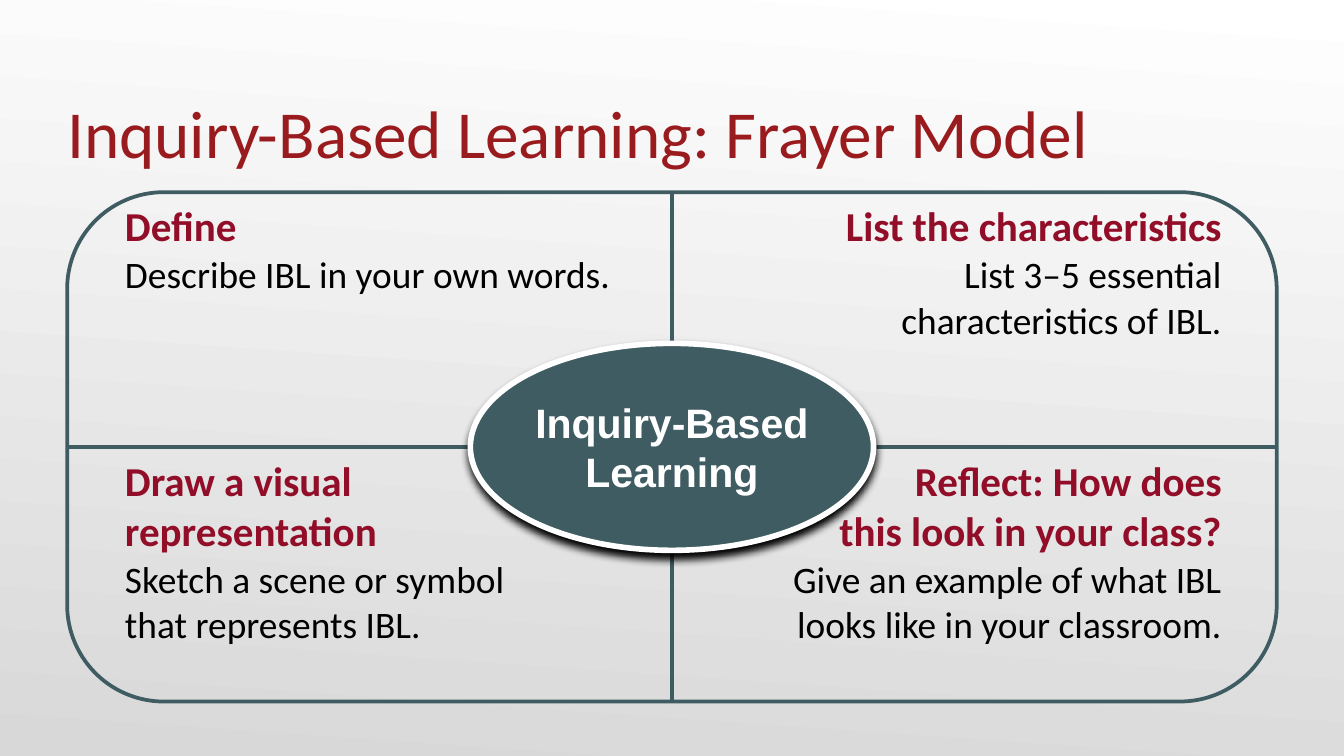
from dataclasses import dataclass

from lxml.etree import SubElement
from pptx import Presentation
from pptx.dml.color import RGBColor
from pptx.enum.shapes import MSO_CONNECTOR, MSO_SHAPE
from pptx.enum.text import MSO_ANCHOR as Anchor, MSO_AUTO_SIZE, PP_ALIGN as Align
from pptx.oxml.ns import qn
from pptx.util import Inches, Pt


@dataclass(frozen=True)
class Theme:
    title: str = "991B1E"
    heading: str = "910D28"
    body: str = "000000"
    teal: str = "3E5C61"
    white: str = "FFFFFF"
    grey: str = "D8D8D8"
    font: str = "Calibri"
    hub_font: str = "Arial"
    title_size: int = 36
    heading_size: int = 22
    body_size: int = 20


THEME = Theme()
WIDTH = 10
HEIGHT = WIDTH * 9 / 16  # widescreen
MARGIN = 0.5
FRAME = (MARGIN, 1.43, WIDTH - 2 * MARGIN, 3.79)  # left, top, width, height
TABLE_LEFT, TABLE_WIDTH = 0.85, 8.32
CELL_INSET = 0.08
NO_GRID_STYLE = "{2D5ABB26-0587-4C30-8999-92F81FD0307C}"

# Each quadrant: a heading, then its body paragraphs
QUADRANTS = [
    [
        ("Define", ["Describe IBL in your own words."]),
        ("List the characteristics", ["List 3–5 essential\ncharacteristics of IBL."]),
    ],
    [
        ("Draw a visual\nrepresentation",
         ["Sketch a scene or symbol\nthat represents IBL."]),
        ("Reflect: How does\nthis look in your class?",
         ["Give an example of what IBL", "looks like in your classroom."]),
    ],
]


def rgb(value):
    return RGBColor.from_string(value)


def inches(*lengths):
    return [Inches(length) for length in lengths]


def set_insets(target, left, top, right, bottom):
    target.margin_left, target.margin_top = Inches(left), Inches(top)
    target.margin_right, target.margin_bottom = Inches(right), Inches(bottom)


def write_para(para, text, size, color, bold=False, font=THEME.font, align=Align.LEFT):
    para.alignment = align
    for index, line in enumerate(text.split("\n")):
        if index:
            para.add_line_break()
        span = para.add_run()
        span.text = line
        span.font.name, span.font.size, span.font.bold = font, Pt(size), bold
        span.font.color.rgb = rgb(color)


def paint_background(page):
    fill = page.background.fill
    fill.gradient()
    fill.gradient_angle = 266
    for stop, color in zip(fill.gradient_stops, (THEME.white, THEME.grey)):
        stop.color.rgb = rgb(color)


def add_title(page, text):
    title = page.shapes.title
    title.left, title.top, title.width, title.height = inches(
        MARGIN, 0.34, WIDTH - 2 * MARGIN, 0.94)
    frame = title.text_frame
    frame.auto_size = MSO_AUTO_SIZE.NONE
    frame.vertical_anchor = Anchor.BOTTOM
    set_insets(frame, 0, 0.05, 0, 0)
    write_para(frame.paragraphs[0], text, THEME.title_size, THEME.title)


def add_outlined(page, preset, place, line_color, line_width, fill_color=None):
    shape = page.shapes.add_shape(preset, *inches(*place))
    shape.shadow.inherit = False
    if fill_color:
        shape.fill.solid()
        shape.fill.fore_color.rgb = rgb(fill_color)
    else:
        shape.fill.background()
    shape.line.color.rgb = rgb(line_color)
    shape.line.width = Pt(line_width)
    return shape


def add_divider(page, box, start_side, end_side):
    line = page.shapes.add_connector(MSO_CONNECTOR.STRAIGHT, 0, 0, 0, 0)
    line.begin_connect(box, start_side)
    line.end_connect(box, end_side)
    line.line.color.rgb = rgb(THEME.teal)
    line.line.width = Pt(2.25)
    SubElement(line._element.spPr, qn("a:effectLst"))


def fill_cell(cell, heading, body, align):
    cell.fill.background()
    cell.vertical_anchor = Anchor.TOP
    set_insets(cell, *[CELL_INSET] * 4)
    frame = cell.text_frame
    write_para(frame.paragraphs[0], heading, THEME.heading_size, THEME.heading,
               bold=True, align=align)
    for text in body:
        write_para(frame.add_paragraph(), text, THEME.body_size, THEME.body, align=align)


def add_quadrants(page):
    _, top, _, height = FRAME
    table = page.shapes.add_table(
        2, 2, *inches(TABLE_LEFT, top, TABLE_WIDTH, height)).table
    table.first_row = table.horz_banding = False
    table._tbl.tblPr.find(qn("a:tableStyleId")).text = NO_GRID_STYLE
    for row, quadrants in enumerate(QUADRANTS):
        for column, (heading, body) in enumerate(quadrants):
            align = (Align.LEFT, Align.RIGHT)[column]
            fill_cell(table.cell(row, column), heading, body, align)


def add_drop_shadow(shape, blur, distance):
    effects = shape._element.spPr.find(qn("a:effectLst"))
    shadow = SubElement(effects, qn("a:outerShdw"), blurRad=str(Pt(blur)),
                        dist=str(Pt(distance)), dir="5400000", rotWithShape="0")
    SubElement(shadow, qn("a:srgbClr"), val=THEME.body)


def add_hub(page, text):
    width, height = 3, 1.54
    left = (WIDTH - width) / 2
    top = FRAME[1] + (FRAME[3] - height) / 2
    hub = add_outlined(page, MSO_SHAPE.OVAL, (left, top, width, height),
                       THEME.white, 3, THEME.teal)
    add_drop_shadow(hub, 4.5, 3)
    frame = hub.text_frame
    frame.word_wrap = True
    frame.vertical_anchor = Anchor.MIDDLE
    set_insets(frame, 0, 0, 0, 0)
    write_para(frame.paragraphs[0], text, THEME.heading_size, THEME.white,
               bold=True, font=THEME.hub_font, align=Align.CENTER)


def main():
    deck = Presentation()
    deck.slide_width, deck.slide_height = inches(WIDTH, HEIGHT)
    page = deck.slides.add_slide(deck.slide_layouts[5])
    paint_background(page)
    add_title(page, "Inquiry-Based Learning: Frayer Model")

    # Rounded frame, split down and across
    border = add_outlined(page, MSO_SHAPE.ROUNDED_RECTANGLE, FRAME, THEME.teal, 2)
    border.adjustments[0] = 0.19
    add_divider(page, border, 0, 2)
    add_divider(page, border, 1, 3)

    # Four quadrants around the central topic
    add_quadrants(page)
    add_hub(page, "Inquiry-Based\nLearning")
    deck.save("out.pptx")


if __name__ == "__main__":
    main()
